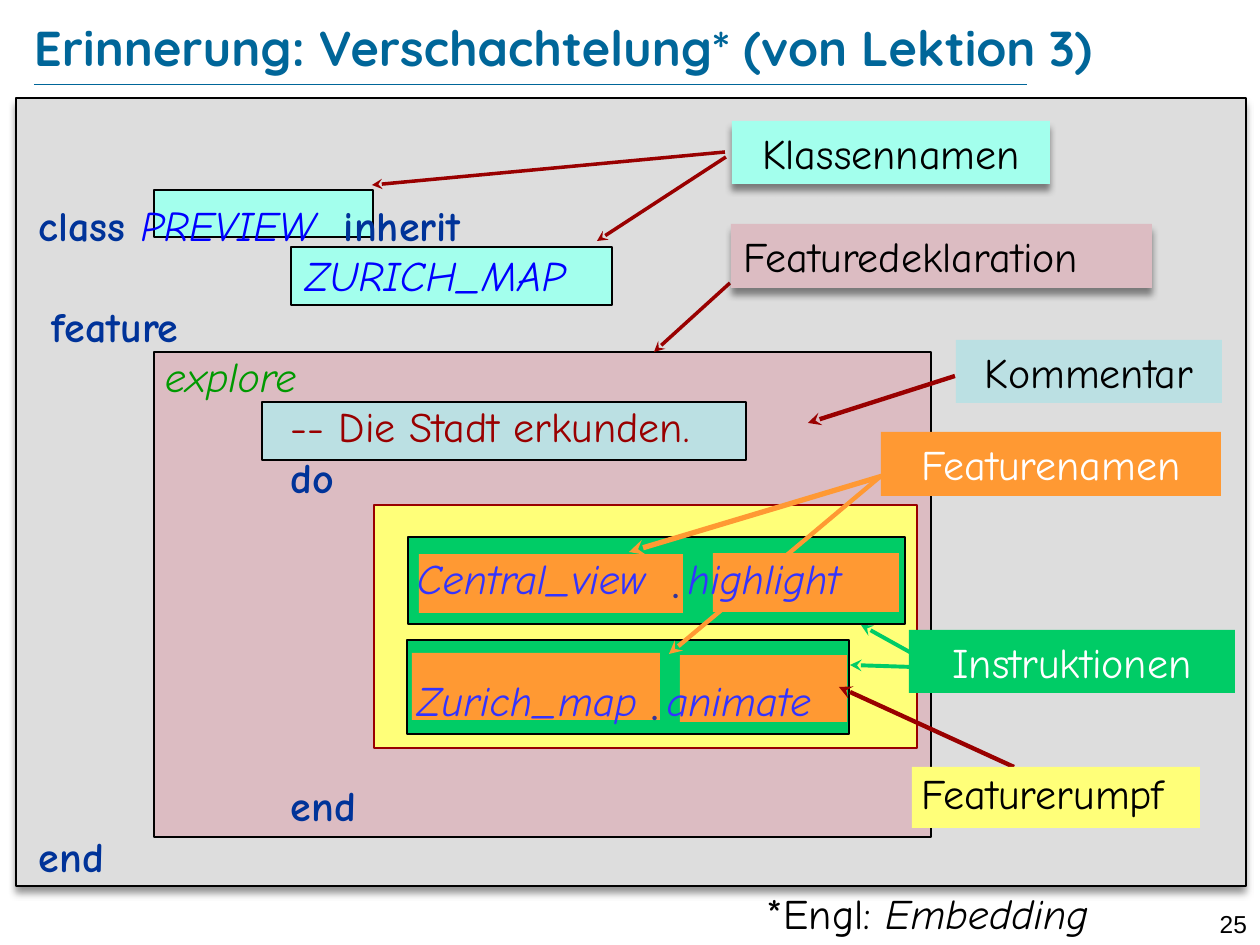
"""Build the lesson slide on nested program structure."""
from lxml.etree import SubElement
from pptx import Presentation
from pptx.dml.color import RGBColor
from pptx.enum.shapes import MSO_CONNECTOR, MSO_SHAPE
from pptx.enum.text import MSO_ANCHOR, PP_ALIGN
from pptx.oxml.ns import qn
from pptx.util import Pt

SCALE = 914400 // 126
LEFT, CENTER, RIGHT = PP_ALIGN.LEFT, PP_ALIGN.CENTER, PP_ALIGN.RIGHT
COLORS = {
    "black": "000000", "white": "FFFFFF", "gray": "DDDDDD", "pink": "DCBCC2",
    "mint": "A3FFED", "pale": "BBE0E3", "yellow": "FFFF79", "green": "00CC66",
    "orange": "FF9933", "red": "990000", "title": "006699", "keyword": "003399",
    "class": "0000FF", "feature": "009900", "call": "3333FF", "dot": "333399",
}
STYLES = {
    "keyword": ("keyword", True, False),
    "class": ("class", False, True),
    "feature": ("feature", False, True),
    "comment": ("red", False, False),
    "call": ("call", False, True),
    "dot": ("dot", False, False),
    "plain": ("black", False, False),
    "term": ("black", False, True),
}

FRAMES = [
    ((16, 98, 1230, 788), "gray", "black", True),
    ((154, 352, 777, 485), "pink", "black", False),
    ((154, 190, 219, 47), "mint", "black", False),
    ((291, 247, 321, 58), "mint", "black", False),
    ((262, 402, 484, 58), "pale", "black", False),
    ((374, 505, 543, 243), "yellow", "red", False),
    ((407, 640, 442, 94), "green", "black", False),
    ((408, 537, 497, 87), "green", "black", False),
    ((680, 655, 167, 67), "orange", None, False),
    ((412, 653, 248, 67), "orange", None, False),
    ((713, 553, 186, 59), "orange", None, False),
    ((419, 554, 264, 59), "orange", None, False),
]
ARROWS = [
    ((730, 283), (654, 352), "red", 2),
    ((726, 157), (597, 241), "red", 2),
    ((725, 152), (372, 185), "red", 2),
    ((955, 376), (808, 423), "red", 2.5),
    ((1014, 767), (839, 687), "red", 2.5),
    ((915, 655), (861, 625), "green", 2.25),
    ((912, 667), (850, 665), "green", 2.25),
    ((916, 466), (629, 552), "orange", 3),
    ((881, 476), (669, 654), "orange", 2.5),
]
LABELS = [
    ("Klassennamen", (732, 121, 318, 63), "mint", "black", CENTER, (0, 0), True),
    ("Featuredeklaration", (731, 224, 421, 64), "pink", "black", LEFT, (13, 0), True),
    ("Kommentar", (956, 340, 266, 63), "pale", "black", CENTER, (0, 0), False),
    ("Featurenamen", (881, 432, 340, 64), "orange", "white", CENTER, (0, 0), False),
    ("Instruktionen", (909, 630, 326, 63), "green", "white", CENTER, (0, 0), False),
    ("Featurerumpf", (912, 767, 288, 61), "yellow", "black", LEFT, (10, 10), False),
]
CODE = [
    ([305], 0, 1.5, [("class ", "keyword"), ("PREVIEW", "class"), ("\tinherit", "keyword")]),
    ([266], 0, 1, [("\tZURICH_MAP", "class")]),
    ([13], 0, 1, [("\tfeature", "keyword")]),
    ([126], 0, 1, [("\texplore", "feature")]),
    ([252], 0, 1, [("\t-- Die Stadt erkunden.", "comment")]),
    ([252], 0, 1, [("\tdo", "keyword")]),
    ([378, 633], 28.8, 1, [("\tCentral_view", "call"), ("\t• ", "dot"), ("highlight", "call")]),
    ([378], 28.8, 1.3, [("\tZurich_map ", "call"), ("• ", "dot"), ("animate", "call")]),
    ([252], 28.8, 1, [("\tend", "keyword")]),
    ([], 0, 1, [("end", "keyword")]),
]
FOOTNOTE = [("*Engl: ", "plain"), ("Embedding", "term")]


def px(value):
    return round(value * SCALE)


def color(name):
    return RGBColor.from_string(COLORS[name])


def add_effects(shape, shadow=False):
    effects = SubElement(shape._element.spPr, qn("a:effectLst"))
    if shadow:
        outer = SubElement(effects, qn("a:outerShdw"), blurRad=str(Pt(4)), dist=str(Pt(4)),
                           dir="5400000", algn="t", rotWithShape="0")
        tone = SubElement(outer, qn("a:srgbClr"), val=COLORS["black"])
        SubElement(tone, qn("a:alpha"), val="43000")


def add_frame(page, place, fill, line, shadow):
    shape = page.shapes.add_shape(MSO_SHAPE.RECTANGLE, *map(px, place))
    shape.fill.solid()
    shape.fill.fore_color.rgb = color(fill)
    if line:
        shape.line.color.rgb = color(line)
        shape.line.width = Pt(0.75)
    else:
        shape.line.fill.background()
    add_effects(shape, shadow)
    return shape


def add_line(page, start, end, tone, width, arrow=True):
    line = page.shapes.add_connector(MSO_CONNECTOR.STRAIGHT, *map(px, start + end))
    line.line.color.rgb = color(tone)
    line.line.width = Pt(width)
    if arrow:
        SubElement(line.line._get_or_add_ln(), qn("a:tailEnd"), type="stealth")
    add_effects(line)


def set_insets(frame, left=0, top=0, right=0, bottom=0):
    frame.word_wrap = True
    frame.margin_left, frame.margin_top = px(left), px(top)
    frame.margin_right, frame.margin_bottom = px(right), px(bottom)


def set_font(font, size, tone, name="Comic Neue", bold=False, italic=False):
    font.name, font.size, font.bold, font.italic = name, Pt(size), bold, italic
    font.color.rgb = color(tone)


def write_text(shape, text, align, size, tone, name="Comic Neue", bold=False):
    shape.text_frame.vertical_anchor = MSO_ANCHOR.MIDDLE
    para = shape.text_frame.paragraphs[0]
    para.text, para.alignment = text, align
    set_font(para.font, size, tone, name, bold)


def add_box(page, place, **insets):
    box = page.shapes.add_textbox(*map(px, place))
    set_insets(box.text_frame, **insets)
    return box


def add_spans(para, spans):
    for text, style in spans:
        span = para.add_run()
        span.text = text
        tone, bold, italic = STYLES[style]
        set_font(span.font, 24, tone, bold=bold, italic=italic)
        if style == "dot":
            span._r.get_or_add_rPr().set("baseline", "-20000")


def add_code(page):
    frame = add_box(page, (26, 168, 945, 714), left=13, top=6, right=13, bottom=6).text_frame
    for index, (stops, before, spacing, spans) in enumerate(CODE):
        para = frame.add_paragraph() if index else frame.paragraphs[0]
        para.line_spacing = spacing
        para.space_before = Pt(before)
        if stops:
            tabs = SubElement(para._p.get_or_add_pPr(), qn("a:tabLst"))
            for stop in stops:
                SubElement(tabs, qn("a:tab"), pos=str(px(stop)), algn="l")
        add_spans(para, spans)


def main():
    deck = Presentation()
    deck.slide_width, deck.slide_height = px(1260), px(945)
    page = deck.slides.add_slide(deck.slide_layouts[6])
    add_line(page, (34, 84), (1027, 84), "title", 0.25, arrow=False)
    write_text(add_box(page, (34, 16, 1095, 61)),
               "Erinnerung: Verschachtelung* (von Lektion 3)", LEFT, 28, "title", "Quicksand", True)
    write_text(add_box(page, (1191, 909, 56, 30)), "25", RIGHT, 14, "black", "Arial")
    for frame in FRAMES:
        add_frame(page, *frame)
    for arrow in ARROWS:
        add_line(page, *arrow)
    add_code(page)
    for text, place, fill, tone, align, (left, bottom), shadow in LABELS:
        label = add_frame(page, place, fill, None, shadow)
        set_insets(label.text_frame, left=left, bottom=bottom)
        write_text(label, text, align, 24, tone)
    add_spans(add_box(page, (767, 888, 386, 50)).text_frame.paragraphs[0], FOOTNOTE)
    deck.save("out.pptx")


if __name__ == "__main__":
    main()
